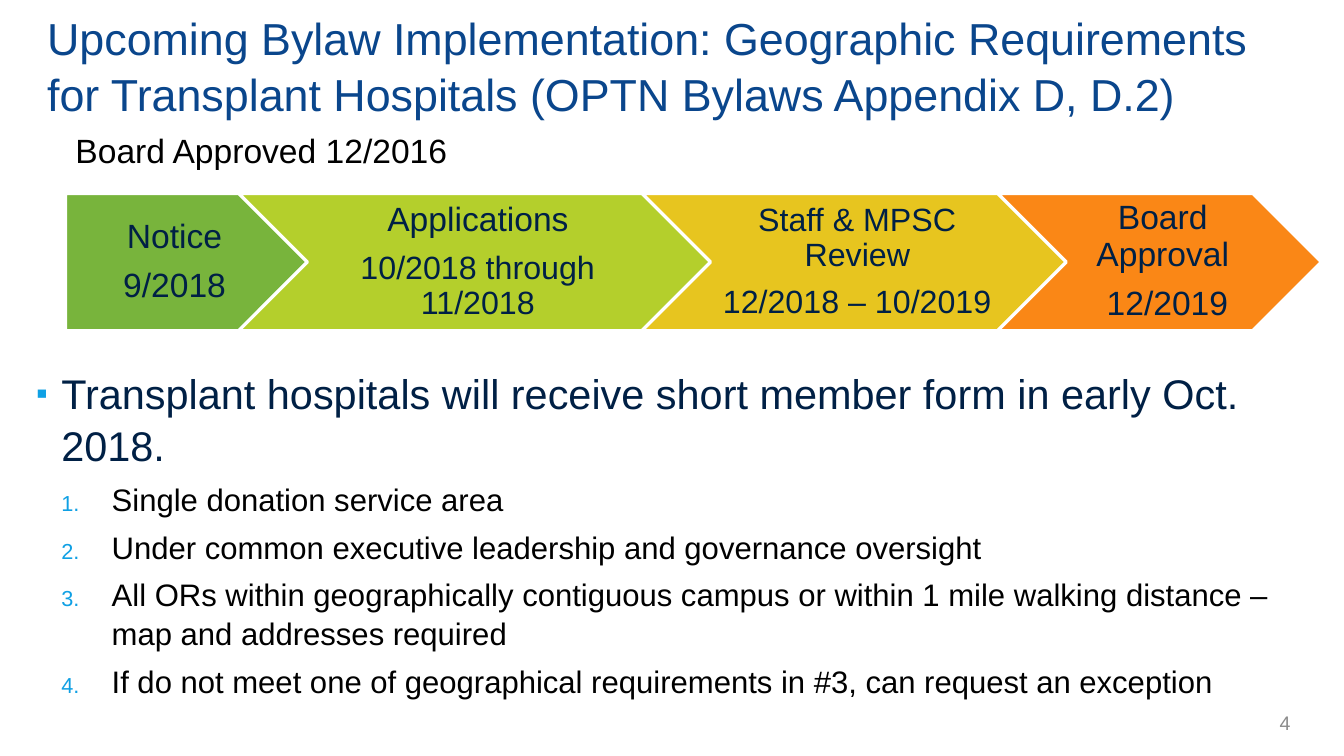
from pptx import Presentation
from pptx.dml.color import RGBColor
from pptx.enum.shapes import MSO_SHAPE
from pptx.enum.text import MSO_ANCHOR, PP_ALIGN
from pptx.oxml.ns import qn
from pptx.util import Pt
from lxml.etree import SubElement

# Colours
BLUE = RGBColor(0x0A, 0x46, 0x8C)
NAVY = RGBColor(0x00, 0x20, 0x45)
BLACK = RGBColor(0x00, 0x00, 0x00)
WHITE = RGBColor(0xFF, 0xFF, 0xFF)
GREY = RGBColor(0x8C, 0x8C, 0x8C)
SKY = RGBColor(0x0F, 0xA0, 0xE4)
GREEN = RGBColor(0x78, 0xB4, 0x3C)
LIME = RGBColor(0xB4, 0xCF, 0x2C)
YELLOW = RGBColor(0xE7, 0xC5, 0x1F)
ORANGE = RGBColor(0xFA, 0x87, 0x16)

# Content
TITLE = ("Upcoming Bylaw Implementation: Geographic Requirements "
         "for Transplant Hospitals (OPTN Bylaws Appendix D, D.2)")
APPROVED = "Board Approved 12/2016"
PAGE = "4"
STEPS = [  # width, fill, (text, size) per line
    (172.8, GREEN, [("Notice", 24), ("9/2018", 24)]),
    (337, LIME, [("Applications", 24), ("10/2018 through 11/2018", 23)]),
    (303.1, YELLOW, [("Staff & MPSC Review", 23), ("12/2018 – 10/2019", 23)]),
    (231.1, ORANGE, [("Board Approval", 24), (" 12/2019", 24)]),
]
LEAD = "Transplant hospitals will receive short member form in early Oct. 2018."
CRITERIA = [
    "Single donation service area",
    "Under common executive leadership and governance oversight",
    "All ORs within geographically contiguous campus or within 1 mile "
    "walking distance – map and addresses required",
    "If do not meet one of geographical requirements in #3, can request an exception",
]

# Timeline geometry
STEP_LEFT, STEP_TOP, STEP_H = 46.8, 138.2, 98
TIP = STEP_H / 2

prs = Presentation()
prs.slide_width, prs.slide_height = Pt(960), Pt(540)
s = prs.slides.add_slide(prs.slide_layouts[6])


def add_box(x, y, w, h, anchor=MSO_ANCHOR.TOP, insets=(7.2, 3.6, 7.2, 3.6)):
    tf = s.shapes.add_textbox(Pt(x), Pt(y), Pt(w), Pt(h)).text_frame
    tf.word_wrap = True
    tf.vertical_anchor = anchor
    tf.margin_left, tf.margin_top, tf.margin_right, tf.margin_bottom = map(Pt, insets)
    return tf


def add_text(tf, text, size, color, align=PP_ALIGN.LEFT, spacing=1.0, before=0, after=0):
    p = tf.paragraphs[0]
    if p.runs:
        p = tf.add_paragraph()
    p.alignment, p.line_spacing = align, spacing
    p.space_before, p.space_after = Pt(before), Pt(after)
    r = p.add_run()
    r.text = text
    r.font.name, r.font.size, r.font.color.rgb = "Arial", Pt(size), color
    return p


def add_bullet(p, indent, hang, percent, tag, **attrs):
    pPr = p._p.get_or_add_pPr()
    pPr.set("marL", str(Pt(indent)))
    pPr.set("indent", str(-Pt(hang)))
    SubElement(SubElement(pPr, qn("a:buClr")), qn("a:srgbClr"), val=str(SKY))
    SubElement(pPr, qn("a:buSzPct"), val=str(percent * 1000))
    SubElement(pPr, qn("a:buFont"), typeface="Arial")
    SubElement(pPr, qn(tag), **attrs)


# Page number, title and approval date
add_text(add_box(766, 501.8, 162.8, 28.8, MSO_ANCHOR.MIDDLE), PAGE, 14, GREY, PP_ALIGN.RIGHT)
add_text(add_box(26.6, 12.2, 917.3, 67.7, MSO_ANCHOR.MIDDLE), TITLE, 32, BLUE, spacing=1.05)
add_text(add_box(46.8, 89.3, 533.5, 36), APPROVED, 24, BLACK)

# Timeline: each step starts one tip before the previous one ends
x = STEP_LEFT
for i, (width, fill, lines) in enumerate(STEPS):
    kind = MSO_SHAPE.CHEVRON if i else MSO_SHAPE.PENTAGON
    sp = s.shapes.add_shape(kind, Pt(x), Pt(STEP_TOP), Pt(width), Pt(STEP_H))
    sp.shadow.inherit = False
    sp.fill.solid()
    sp.fill.fore_color.rgb = fill
    sp.line.color.rgb, sp.line.width = WHITE, Pt(2.25)
    if i:
        text_x, text_w, inset = x + TIP, width - 2 * TIP, 7.2
    else:
        text_x, text_w, inset = x, width - TIP / 2, 10
    tf = add_box(text_x, STEP_TOP, text_w, STEP_H, MSO_ANCHOR.MIDDLE, (inset, 5, 2.5, 5))
    for text, size in lines:
        add_text(tf, text, size, NAVY, PP_ALIGN.CENTER, 0.9, after=0.4 * size)
    x += width - TIP

# Lead bullet and numbered criteria
tf = add_box(18.7, 257.8, 897.1, 244.8)
add_bullet(add_text(tf, LEAD, 29.6, NAVY, spacing=1.05), 18, 18, 80, "a:buChar", char="▪")
for text in CRITERIA:
    p = add_text(tf, text, 22.2, BLACK, spacing=1.05, before=6)
    p.level = 1
    add_bullet(p, 54, 36, 70, "a:buAutoNum", type="arabicPeriod")

prs.save("out.pptx")
